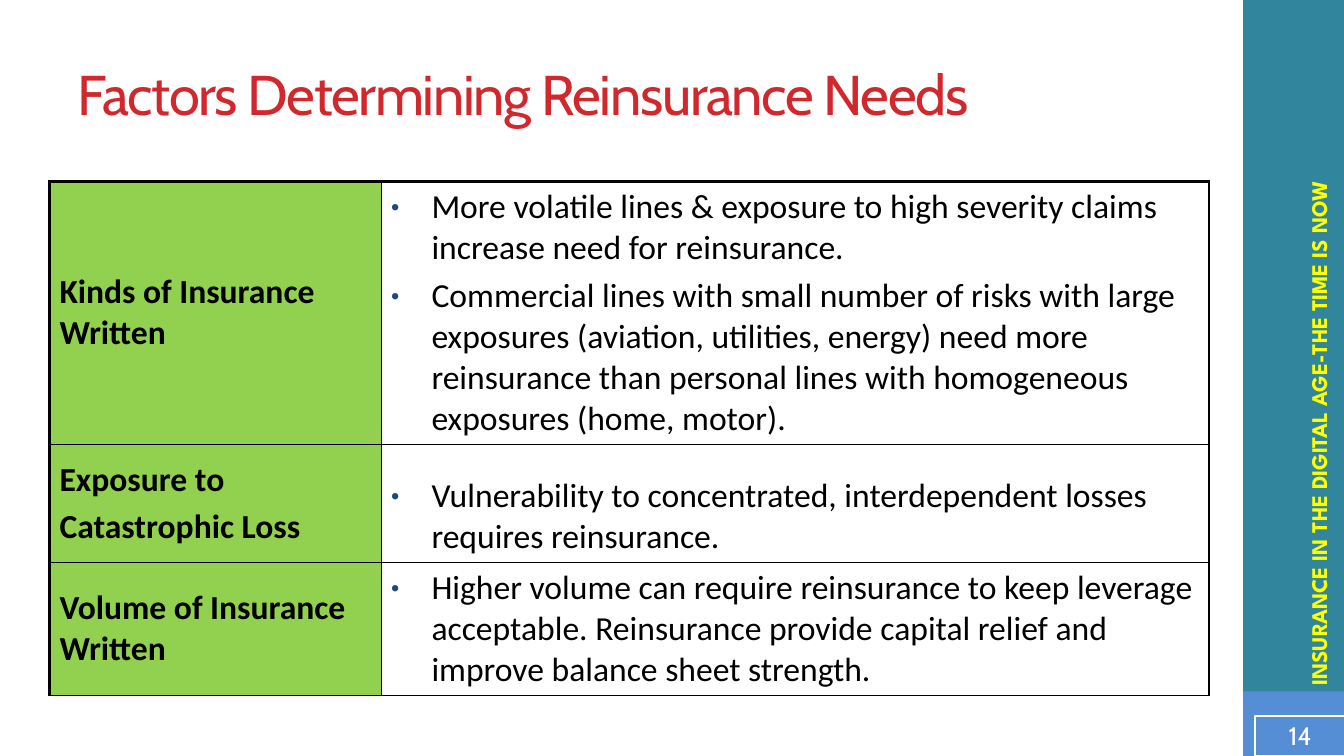
from lxml.etree import SubElement
from pptx import Presentation
from pptx.dml.color import RGBColor
from pptx.enum.shapes import MSO_SHAPE as Preset
from pptx.enum.text import MSO_ANCHOR as Anchor, PP_ALIGN as Align
from pptx.oxml.ns import qn
from pptx.util import Inches, Pt

TITLE = "Factors Determining Reinsurance Needs"
BANNER = "INSURANCE IN THE DIGITAL AGE-THE TIME IS NOW"
PAGE_NUMBER = "14"
FACTORS = [  # label paragraphs, bulleted explanations, row height
    (["Kinds of Insurance Written"],
     ["More volatile lines & exposure to high severity claims increase need for reinsurance.",
      "Commercial lines with small number of risks with large exposures (aviation, utilities, "
      "energy) need more reinsurance than personal lines with homogeneous exposures (home, motor)."],
     2.61),
    (["Exposure to", "Catastrophic Loss"],
     ["Vulnerability to concentrated, interdependent losses requires reinsurance."],
     1.17),
    (["Volume of Insurance Written"],
     ["Higher volume can require reinsurance to keep leverage acceptable. Reinsurance provide "
      "capital relief and improve balance sheet strength."],
     1.32),
]
COLUMNS = (3.29, 8.21)
TABLE_LEFT, TABLE_TOP = 0.49, 1.8
SLIDE_W, SLIDE_H = 13.33, 7.5
SIDEBAR_W, FOOT_TOP = 1, 6.86
THICK, THIN = 2.25, 1
INDENT = Inches(0.4)


def rgb(color):
    return RGBColor.from_string(color)


def box(*place):
    return [Inches(length) for length in place]


def style(paragraph, size, face, color, bold=False):
    font = paragraph.font
    font.size, font.name, font.bold = Pt(size), face, bold
    font.color.rgb = rgb(color)


def add_block(slide, place, fill=None, line=None):
    block = slide.shapes.add_shape(Preset.RECTANGLE, *box(*place))
    block.shadow.inherit = False
    if fill:
        block.fill.solid()
        block.fill.fore_color.rgb = rgb(fill)
    else:
        block.fill.background()
    if line:
        block.line.color.rgb, block.line.width = rgb(line), Pt(1.5)
    else:
        block.line.fill.background()
    return block


def add_bullet(paragraph):
    props = paragraph._p.get_or_add_pPr()
    props.set("marL", str(INDENT))
    props.set("indent", str(-INDENT))
    SubElement(SubElement(props, qn("a:buClr")), qn("a:srgbClr"), val="1F497D")
    SubElement(props, qn("a:buSzPct"), val="70000")
    SubElement(props, qn("a:buFont"), typeface="Arial")
    SubElement(props, qn("a:buChar"), char="•")


def set_borders(cell, left, right, top, bottom):
    props = cell._tc.get_or_add_tcPr()
    for side, width in zip("LRTB", (left, right, top, bottom)):
        line = SubElement(props, qn(f"a:ln{side}"), w=str(Pt(width)))
        SubElement(SubElement(line, qn("a:solidFill")), qn("a:srgbClr"), val="000000")


def fill_cell(cell, texts, is_label):
    cell.fill.solid()
    cell.fill.fore_color.rgb = rgb("92D050" if is_label else "FFFFFF")
    cell.vertical_anchor = Anchor.MIDDLE if is_label else Anchor.BOTTOM
    cell.text_frame.text = "\n".join(texts)
    for i, paragraph in enumerate(cell.text_frame.paragraphs):
        if i:
            paragraph.space_before = Pt(4.8)
        if not is_label:
            add_bullet(paragraph)
        style(paragraph, 24, "Calibri", "000000", bold=is_label)


def add_sidebar(slide):
    left = SLIDE_W - SIDEBAR_W
    add_block(slide, (left, 0, SIDEBAR_W, SLIDE_H), fill="31859C")
    add_block(slide, (left, FOOT_TOP, SIDEBAR_W, SLIDE_H - FOOT_TOP), fill="558ED5")

    banner = slide.shapes.add_textbox(*box(9.53, 3.17, 7.09, 0.37))
    banner.rotation = 270
    banner.text_frame.word_wrap = True
    banner.text_frame.text = BANNER
    style(banner.text_frame.paragraphs[0], 16, "League Spartan", "FFFF00", bold=True)

    number = add_block(slide, (12.45, 7.1, 0.89, 0.4), line="FFFFFF").text_frame
    number.margin_left = number.margin_right = number.margin_top = number.margin_bottom = 0
    number.vertical_anchor = Anchor.MIDDLE
    number.text = PAGE_NUMBER
    number.paragraphs[0].alignment = Align.CENTER
    style(number.paragraphs[0], 18, "Cabin", "FFFFFF")


def add_title(slide):
    title = slide.shapes.title
    title.left, title.top, title.width, title.height = box(0.67, 0.3, 11.11, 1.25)
    frame = title.text_frame
    frame.text = TITLE
    frame.vertical_anchor = Anchor.MIDDLE
    heading = frame.paragraphs[0]
    heading.alignment = Align.LEFT
    style(heading, 40, "Cabin", "D1282E")
    heading.runs[0].font._element.set("spc", "-100")


def add_factors(slide):
    height = sum(factor[2] for factor in FACTORS)
    place = box(TABLE_LEFT, TABLE_TOP, sum(COLUMNS), height)
    table = slide.shapes.add_table(len(FACTORS), len(COLUMNS), *place).table
    table.first_row = table.horz_banding = False
    for column, width in zip(table.columns, COLUMNS):
        column.width = Inches(width)
    for r, (label, points, row_height) in enumerate(FACTORS):
        table.rows[r].height = Inches(row_height)
        top = THIN if r else THICK
        for c, texts in enumerate((label, points)):
            cell = table.cell(r, c)
            left, right = (THIN, THICK) if c else (THICK, THIN)
            set_borders(cell, left, right, top, THIN)
            fill_cell(cell, texts, is_label=c == 0)


def main():
    deck = Presentation()
    deck.slide_width, deck.slide_height = box(SLIDE_W, SLIDE_H)
    slide = deck.slides.add_slide(deck.slide_layouts[5])
    add_sidebar(slide)
    add_title(slide)
    add_factors(slide)
    deck.save("out.pptx")


if __name__ == "__main__":
    main()
